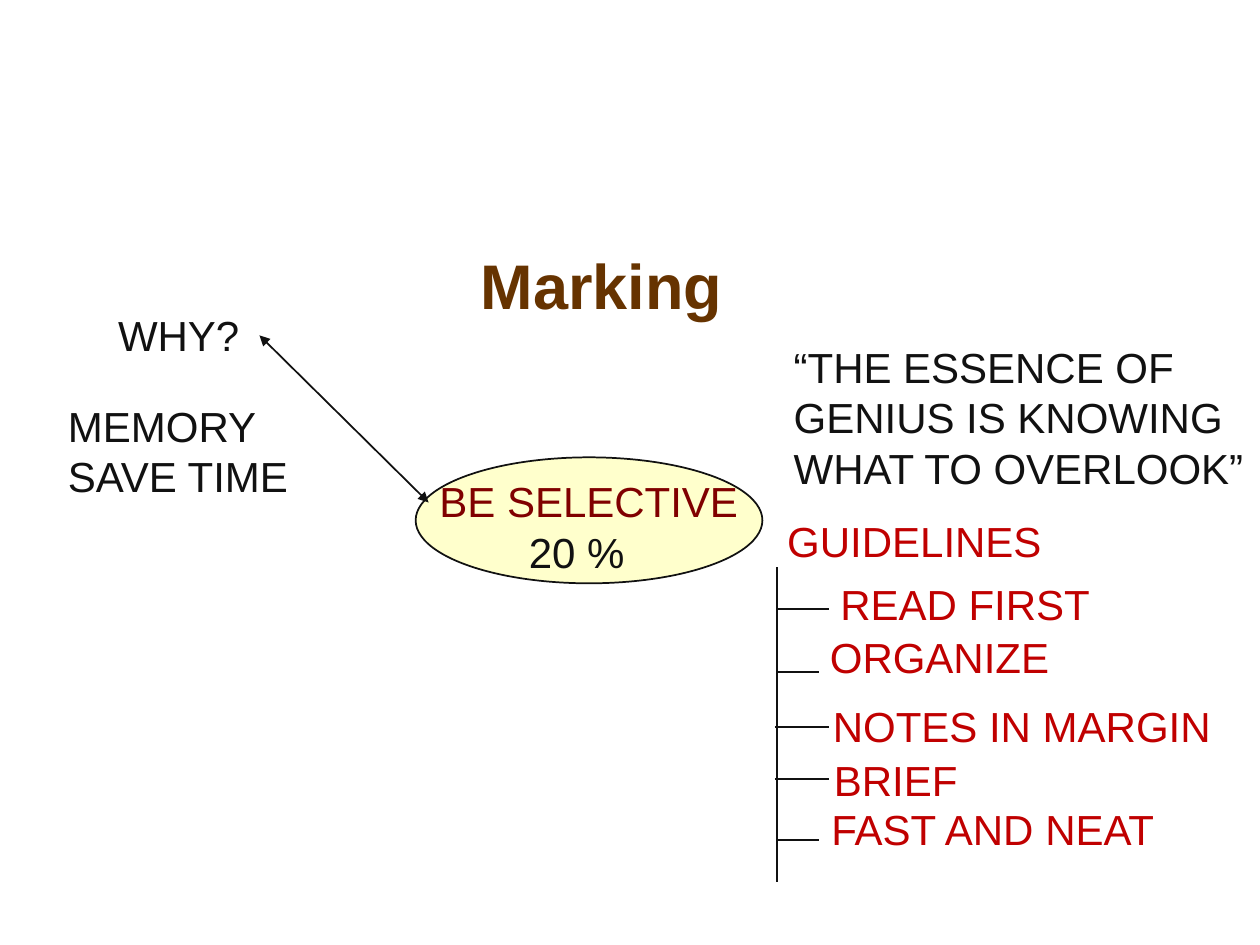
from lxml.etree import SubElement
from pptx import Presentation
from pptx.dml.color import RGBColor
from pptx.enum.shapes import MSO_CONNECTOR, MSO_SHAPE
from pptx.enum.text import MSO_ANCHOR, PP_ALIGN
from pptx.oxml.ns import qn
from pptx.util import Cm, Pt

BROWN = RGBColor(0x66, 0x33, 0x00)
MAROON = RGBColor(0x80, 0x00, 0x00)
RED = RGBColor(0xC0, 0x00, 0x00)
INK = RGBColor(0x11, 0x11, 0x11)
CREAM = RGBColor(0xFF, 0xFF, 0xCC)

prs = Presentation()
prs.slide_width = Cm(25.4)
prs.slide_height = Cm(19.05)
slide = prs.slides.add_slide(prs.slide_layouts[6])


def add_text(left, top, width, height, lines, color, size=24, bold=False):
    box = slide.shapes.add_textbox(Cm(left), Cm(top), Cm(width), Cm(height))
    frame = box.text_frame
    frame.word_wrap = False
    for index, line in enumerate(lines):
        paragraph = frame.paragraphs[0] if index == 0 else frame.add_paragraph()
        run = paragraph.add_run()
        run.text = line
        run.font.name = "Arial"
        run.font.size = Pt(size)
        run.font.bold = bold
        run.font.color.rgb = color
    return frame


def add_line(x1, y1, x2, y2):
    line = slide.shapes.add_connector(
        MSO_CONNECTOR.STRAIGHT, Cm(x1), Cm(y1), Cm(x2), Cm(y2))
    line.line.color.rgb = INK
    line.line.width = Pt(1)
    SubElement(line._element.spPr, qn("a:effectLst"))
    return line


title = add_text(3.02, 5.03, 18.21, 1.42, ["Marking"], BROWN, 36, True)
title.word_wrap = True
title.vertical_anchor = MSO_ANCHOR.MIDDLE
title.paragraphs[0].alignment = PP_ALIGN.CENTER

selective = slide.shapes.add_shape(
    MSO_SHAPE.OVAL, Cm(8.38), Cm(9.22), Cm(6.99), Cm(2.54))
selective.shadow.inherit = False
selective.fill.solid()
selective.fill.fore_color.rgb = CREAM
selective.line.color.rgb = INK
selective.line.width = Pt(1)
add_text(8.61, 9.47, 6.53, 1.27, ["BE SELECTIVE"], MAROON)
add_text(10.41, 10.49, 2.46, 1.3, ["20 %"], INK)

why_link = add_line(5.23, 6.76, 8.64, 10.13)
for end in ("a:headEnd", "a:tailEnd"):
    SubElement(why_link.line._get_or_add_ln(), qn(end), type="triangle")

add_text(2.13, 6.12, 2.95, 1.27, ["WHY?"], INK)
add_text(1.12, 7.95, 5.03, 2.29, ["MEMORY", "SAVE TIME"], INK)
add_text(15.75, 6.76, 9.68, 3.3,
         ["“THE ESSENCE OF", "GENIUS IS KNOWING", "WHAT TO OVERLOOK”"], INK)

add_text(15.62, 10.26, 5.64, 1.27, ["GUIDELINES"], RED)
add_line(15.67, 11.43, 15.67, 17.78)
guidelines = [
    ("READ FIRST", 16.69, 11.53, 5.54, 15.67, 16.71, 12.27),
    ("ORGANIZE", 16.48, 12.6, 4.95, 15.67, 16.51, 13.54),
    ("NOTES IN MARGIN", 16.54, 14, 8.13, 15.62, 16.71, 14.66),
    ("BRIEF", 16.56, 15.09, 3, 15.62, 16.71, 15.7),
    ("FAST AND NEAT", 16.51, 16.08, 7.06, 15.67, 16.51, 16.94),
]
for label, left, top, width, tick_start, tick_end, tick_y in guidelines:
    add_line(tick_start, tick_y, tick_end, tick_y)
    add_text(left, top, width, 1.27, [label], RED)

prs.save("out.pptx")
